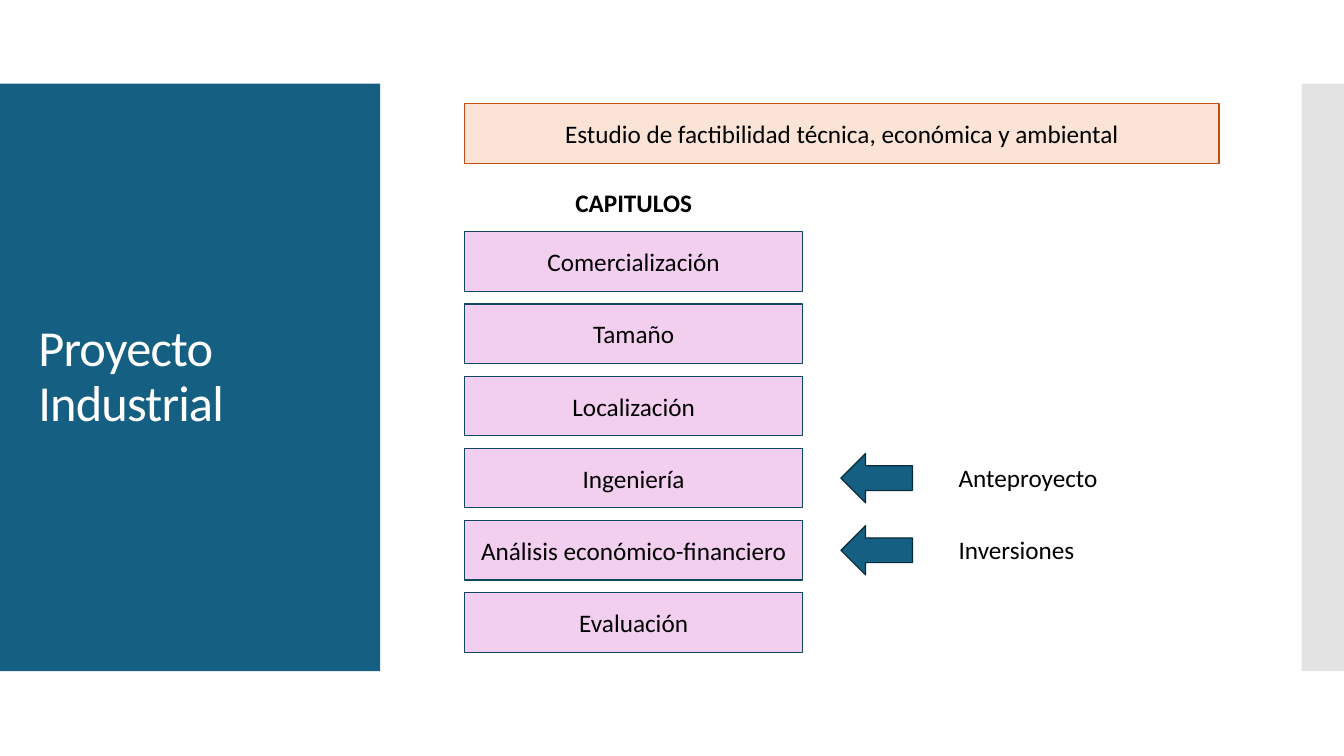
from dataclasses import dataclass

from lxml import etree
from pptx import Presentation
from pptx.dml.color import RGBColor
from pptx.enum import shapes, text
from pptx.oxml.ns import qn
from pptx.util import Inches, Pt


@dataclass(frozen=True)
class Theme:
    font: str = "Calibri"
    title_size: float = 36
    body_size: float = 18
    line_width: float = 0.85
    white: str = "FFFFFF"
    black: str = "000000"
    blue: str = "156082"
    arrow_line: str = "092A39"
    grey: str = "C8C8C8"
    pink: str = "F2CFEE"
    pink_line: str = "104862"
    peach: str = "FBE3D6"
    peach_line: str = "C04F15"


@dataclass(frozen=True)
class Box:
    left: float
    top: float
    width: float
    height: float

    def lengths(self):
        return [Inches(n) for n in (self.left, self.top, self.width, self.height)]


THEME = Theme()
BOX_HEIGHT = 0.59
CHAPTERS = [
    ("Comercialización", None),
    ("Tamaño", None),
    ("Localización", None),
    ("Ingeniería", "Anteproyecto"),
    ("Análisis económico-financiero", "Inversiones"),
    ("Evaluación", None),
]


def write(shape, words, size=THEME.body_size, color=THEME.black, bold=False,
          align=text.PP_ALIGN.LEFT, anchor=text.MSO_ANCHOR.MIDDLE):
    frame = shape.text_frame
    frame.word_wrap = True
    frame.vertical_anchor = anchor
    paragraph = frame.paragraphs[0]
    paragraph.alignment = align
    run = paragraph.add_run()
    run.text = words
    run.font.name = THEME.font
    run.font.size = Pt(size)
    run.font.bold = bold
    run.font.color.rgb = RGBColor.from_string(color)
    return paragraph


def add_block(slide, box, fill, line=None, kind=shapes.MSO_SHAPE.RECTANGLE):
    shape = slide.shapes.add_shape(kind, *box.lengths())
    shape.shadow.inherit = False
    shape.fill.solid()
    shape.fill.fore_color.rgb = RGBColor.from_string(fill)
    if line:
        shape.line.color.rgb = RGBColor.from_string(line)
        shape.line.width = Pt(THEME.line_width)
    else:
        shape.line.fill.background()
    return shape


def add_side_panels(slide, band):
    """Fill the left and right ends of the band."""
    add_block(slide, Box(band.left, band.top, 3.77, band.height), THEME.blue)
    strip = 0.42
    right = Box(band.left + band.width - strip, band.top, strip, band.height)
    panel = add_block(slide, right, THEME.grey)
    color = panel.element.spPr.find(qn("a:solidFill")).find(qn("a:srgbClr"))
    etree.SubElement(color, qn("a:alpha")).set("val", "50000")


def place_title(slide, box):
    title = slide.shapes.title
    title.left, title.top, title.width, title.height = box.lengths()
    paragraph = write(title, "Proyecto Industrial", size=THEME.title_size,
                      color=THEME.white)
    paragraph.line_spacing = 0.9
    title.text_frame.auto_size = text.MSO_AUTO_SIZE.NONE
    for properties in title.element.iter(qn("a:rPr")):
        properties.set("spc", "-60")
    # The title must lie in front of the side panel.
    title.element.getparent().append(title.element)


def add_study_heading(slide, box):
    heading = add_block(slide, box, THEME.peach, THEME.peach_line)
    write(heading, "Estudio de factibilidad técnica, económica y ambiental",
          align=text.PP_ALIGN.CENTER)


def add_note(slide, box, words):
    """Add an arrow pointing left and its label, inside one row."""
    arrow = Box(box.left, box.top + 0.05, 0.71, 0.49)
    add_block(slide, arrow, THEME.blue, THEME.arrow_line,
              shapes.MSO_SHAPE.LEFT_ARROW)
    label = Box(box.left + 1.07, box.top + 0.09, box.width - 1.07, 0.4)
    write(slide.shapes.add_textbox(*label.lengths()), words,
          anchor=text.MSO_ANCHOR.TOP)


def add_chapters(slide, box):
    """Stack the chapter boxes under their heading, with notes to the right."""
    heading = add_block(slide, Box(box.left, box.top, box.width, 0.47), THEME.white)
    write(heading, "CAPITULOS", bold=True, align=text.PP_ALIGN.CENTER)
    first = box.top + 0.53
    last = box.top + box.height - BOX_HEIGHT
    pitch = (last - first) / (len(CHAPTERS) - 1)
    for index, (chapter, note) in enumerate(CHAPTERS):
        row = Box(box.left, first + index * pitch, box.width, BOX_HEIGHT)
        block = add_block(slide, row, THEME.pink, THEME.pink_line)
        write(block, chapter, align=text.PP_ALIGN.CENTER)
        if note:
            note_left = row.left + row.width + 0.38
            add_note(slide, Box(note_left, row.top, 3.43, row.height), note)


def main():
    presentation = Presentation()
    presentation.slide_width = Inches(13.33)
    presentation.slide_height = Inches(7.5)
    slide = presentation.slides.add_slide(presentation.slide_layouts[5])
    add_side_panels(slide, Box(0, 0.83, 13.33, 5.83))
    place_title(slide, Box(0.28, 1.23, 3.22, 5.03))
    add_study_heading(slide, Box(4.61, 1.03, 7.48, BOX_HEIGHT))
    add_chapters(slide, Box(4.61, 1.77, 3.35, 4.7))
    presentation.save("out.pptx")


if __name__ == "__main__":
    main()
